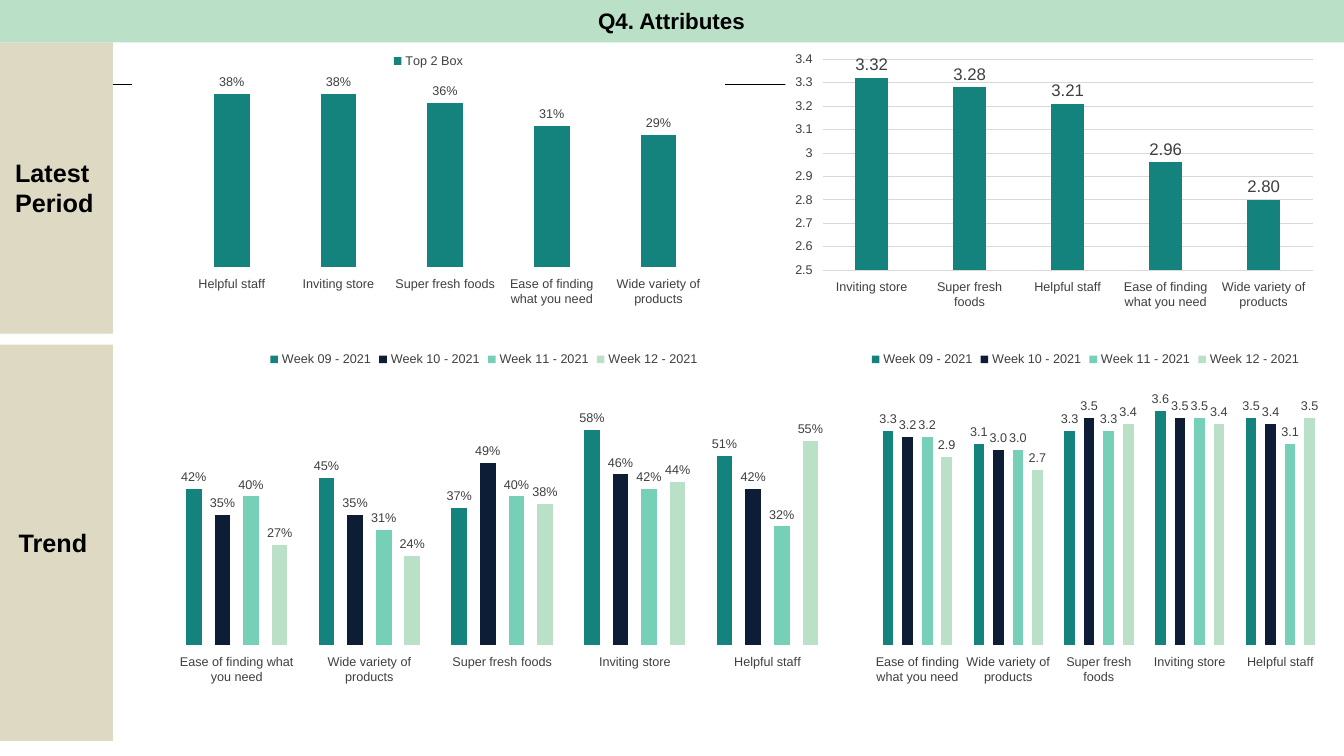
from pptx import Presentation, oxml, util as u
from pptx.chart import data as cd
from pptx.dml.color import RGBColor
from pptx.enum import chart as ch, shapes, text
from pptx.oxml import ns

GRID = u.Inches(0.01)
COLUMNS, ROWS = 1333, 750
BLACK = RGBColor(0x00, 0x00, 0x00)
WHITE = RGBColor(0xFF, 0xFF, 0xFF)
GREY = RGBColor(0x3F, 0x3F, 0x3F)
GRIDLINE = RGBColor(0xD8, 0xD8, 0xD8)
SAND = RGBColor(0xDE, 0xD9, 0xC3)
TEAL = RGBColor(0x14, 0x82, 0x7D)
NAVY = RGBColor(0x0D, 0x1D, 0x36)
AQUA = RGBColor(0x76, 0xD0, 0xB8)
MINT = RGBColor(0xBB, 0xE0, 0xC8)
WEEK_COLOURS = (TEAL, NAVY, AQUA, MINT)
EASE, VARIETY, FRESH, INVITING, HELPFUL = (
    "Ease of finding what you need", "Wide variety of products",
    "Super fresh foods", "Inviting store", "Helpful staff")
TREND_ORDER = (EASE, VARIETY, FRESH, INVITING, HELPFUL)


def lengths(box):
    """Turn grid units into slide lengths."""
    return [value * GRID for value in box]


def within(region, offset):
    """Place a box relative to the corner of its region."""
    left, top, width, height = offset
    return region[0] + left, region[1] + top, width, height


def style_font(font, size, colour=GREY, bold=None):
    """Set the slide's typeface with a size and colour."""
    font.name, font.size, font.bold = "Arial", u.Pt(size), bold
    font.color.rgb = colour


def write(holder, words, size=18, align=None, anchor=text.MSO_ANCHOR.MIDDLE):
    """Write bold words into a shape without margins."""
    frame = holder.text_frame
    frame.word_wrap, frame.auto_size = True, text.MSO_AUTO_SIZE.NONE
    frame.vertical_anchor = anchor
    frame.margin_left = frame.margin_right = frame.margin_top = frame.margin_bottom = 0
    frame.text = words
    frame.paragraphs[0].alignment = align
    style_font(frame.paragraphs[0].runs[0].font, size, BLACK, True)


def block(slide, box, colour):
    """Draw a plain filled rectangle."""
    panel = slide.shapes.add_shape(shapes.MSO_SHAPE.RECTANGLE, *lengths(box))
    panel.shadow.inherit = False
    panel.fill.solid()
    panel.fill.fore_color.rgb = colour
    panel.line.fill.background()


def white_fill():
    """Make a white, unlined chart background."""
    return oxml.parse_xml(
        f'<c:spPr {ns.nsdecls("c", "a")}><a:solidFill><a:srgbClr val="{WHITE}"/>'
        '</a:solidFill><a:ln><a:noFill/></a:ln></c:spPr>')


def set_plot_area(chart, box, plot):
    """Fix the inner plot box and fill the backgrounds."""
    space = chart._chartSpace
    area = space.chart.plotArea
    for old in area.findall(ns.qn("c:layout")):
        area.remove(old)
    shares = zip("xywh", (plot[0] / box[2], plot[1] / box[3],
                          plot[2] / box[2], plot[3] / box[3]))
    sizes = "".join(f'<c:{key} val="{share:.4f}"/>' for key, share in shares)
    area.insert(0, oxml.parse_xml(
        f'<c:layout {ns.nsdecls("c")}><c:manualLayout><c:layoutTarget val="inner"/>'
        f'<c:xMode val="edge"/><c:yMode val="edge"/>{sizes}</c:manualLayout></c:layout>'))
    area.append(white_fill())
    space.chart.addnext(white_fill())


def column_chart(slide, box, plot, categories, series, limits, label_format,
                 label_size=9, legend=True, scale=False):
    """Add a clustered column chart with labelled bars."""
    figures = cd.CategoryChartData()
    figures.categories = categories
    for name, values in series:
        figures.add_series(name, values)
    chart = slide.shapes.add_chart(
        ch.XL_CHART_TYPE.COLUMN_CLUSTERED, *lengths(box), figures).chart
    style_font(chart.font, 10, BLACK)
    chart.has_title = False
    chart.has_legend = legend
    if legend:
        chart.legend.position = ch.XL_LEGEND_POSITION.TOP
        chart.legend.include_in_layout = False
        style_font(chart.legend.font, 9)
    value_axis = chart.value_axis
    for axis, labelled in ((chart.category_axis, True), (value_axis, scale)):
        axis.major_tick_mark = axis.minor_tick_mark = ch.XL_TICK_MARK.NONE
        axis.tick_label_position = (ch.XL_TICK_LABEL_POSITION.LOW if labelled
                                    else ch.XL_TICK_LABEL_POSITION.NONE)
        axis.format.line.fill.background()
        style_font(axis.tick_labels.font, 9)
    value_axis.minimum_scale, value_axis.maximum_scale, value_axis.major_unit = limits
    value_axis.has_major_gridlines = scale
    if scale:
        gridline = value_axis.major_gridlines.format.line
        gridline.color.rgb, gridline.width = GRIDLINE, u.Pt(0.75)
    bars = chart.plots[0]
    bars.gap_width, bars.overlap, bars.vary_by_categories = 200, -83, False
    bars.has_data_labels = True
    labels = bars.data_labels
    labels.show_value = True
    labels.position = ch.XL_LABEL_POSITION.OUTSIDE_END
    labels.number_format, labels.number_format_is_linked = label_format, False
    style_font(labels.font, label_size)
    for week, colour in zip(bars.series, WEEK_COLOURS):
        week.format.fill.solid()
        week.format.fill.fore_color.rgb = colour
    set_plot_area(chart, box, plot)


def band(slide, region, heading, heading_box, align=None):
    """Draw a row's side panel and its heading."""
    block(slide, within(region, (0, 0, 112, region[3])), SAND)
    label = slide.shapes.add_textbox(*lengths(within(region, heading_box)))
    write(label, heading, align=align)


def latest_period(slide, region):
    """Build the row of latest results."""
    band(slide, region, "Latest Period", (15, 114, 97, 60))
    column_chart(slide, within(region, (131, 0, 588, 268)), (46, 42, 529, 181),
                 (HELPFUL, INVITING, FRESH, EASE, VARIETY),
                 [("Top 2 Box", (38, 38, 36, 31, 29))], (0, 40, 5), '0"%"')
    column_chart(slide, within(region, (779, 4, 533, 267)), (37, 13, 486, 209),
                 (INVITING, FRESH, HELPFUL, EASE, VARIETY),
                 [("Series 1", (3.32, 3.28, 3.21, 2.96, 2.8))],
                 (2.5, 3.4, 0.1), "0.00", label_size=12, legend=False, scale=True)


def trend(slide, region):
    """Build the row of weekly results."""
    band(slide, region, "Trend ", (0, 182, 112, 29), text.PP_ALIGN.CENTER)
    weeks = [f"Week {number:02} - 2021" for number in range(9, 13)]
    shares = ((42, 45, 37, 58, 51), (35, 35, 49, 46, 42),
              (40, 31, 40, 42, 32), (27, 24, 38, 44, 55))
    means = ((3.3, 3.1, 3.3, 3.6, 3.5), (3.2, 3, 3.5, 3.5, 3.4),
             (3.2, 3, 3.3, 3.5, 3.1), (2.9, 2.7, 3.4, 3.4, 3.5))
    column_chart(slide, within(region, (119, -4, 722, 349)), (50, 44, 658, 258),
                 TREND_ORDER, list(zip(weeks, shares)), (0, 70, 10), '0"%"')
    column_chart(slide, within(region, (828, -4, 497, 349)), (37, 44, 450, 258),
                 TREND_ORDER, list(zip(weeks, means)), (0, 4, 0.5), "0.0")


def header(slide, region):
    """Build the top bar with the slide title."""
    block(slide, region, MINT)
    title = slide.shapes.title
    title.left, title.top, title.width, title.height = lengths(
        within(region, (0, 7, region[2] - 1, 25)))
    write(title, "Q4. Attributes", 16, text.PP_ALIGN.CENTER, text.MSO_ANCHOR.TOP)
    slide.shapes._spTree.append(title._element)


def rule(slide, left, right, height):
    """Draw the thin horizontal rule behind the charts."""
    line = slide.shapes.add_connector(
        shapes.MSO_CONNECTOR.STRAIGHT, *lengths((left, height, right, height)))
    line.line.color.rgb, line.line.width = BLACK, u.Pt(0.75)
    line._element.spPr.append(oxml.parse_xml(f'<a:effectLst {ns.nsdecls("a")}/>'))


def main():
    """Build and save the slide."""
    deck = Presentation()
    deck.slide_width, deck.slide_height = lengths((COLUMNS, ROWS))
    slide = deck.slides.add_slide(deck.slide_layouts[5])
    rule(slide, 82, 1244, 84)
    latest_period(slide, (0, 42, COLUMNS, 289))
    trend(slide, (0, 342, COLUMNS, 393))
    header(slide, (0, 0, COLUMNS, 42))
    deck.save("out.pptx")


if __name__ == "__main__":
    main()
